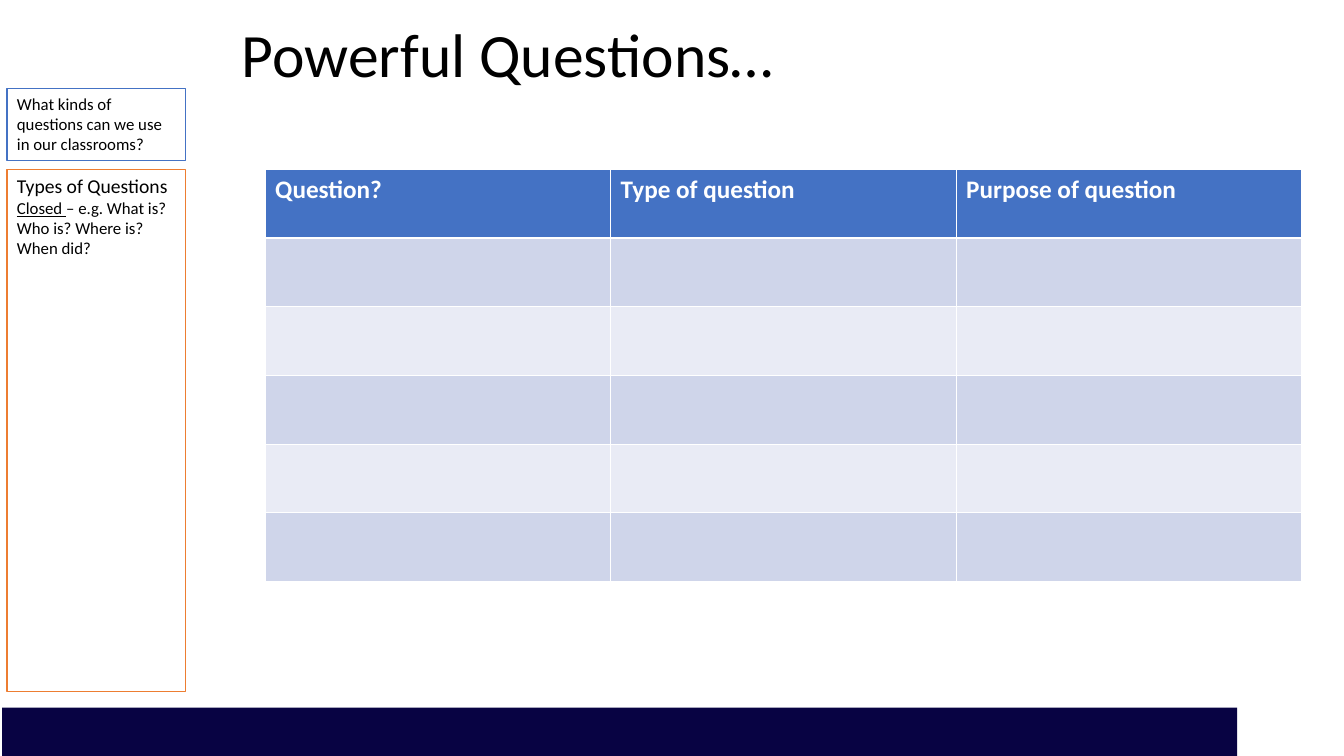
from pptx import Presentation
from pptx.dml.color import RGBColor as RGB
from pptx.enum.shapes import MSO_SHAPE as SHAPE
from pptx.enum.text import MSO_ANCHOR as ANCHOR, PP_ALIGN as ALIGN
from pptx.util import Inches, Pt

BLACK = RGB(0x00, 0x00, 0x00)
WHITE = RGB(0xFF, 0xFF, 0xFF)
NAVY = RGB(0x08, 0x03, 0x43)
BLUE = RGB(0x44, 0x72, 0xC4)
ORANGE = RGB(0xED, 0x7D, 0x31)
BAND = RGB(0xCF, 0xD5, 0xEA)
PALE = RGB(0xE9, 0xEB, 0xF5)


def write(para, text, size=12, color=BLACK, bold=False, under=False):
    """Add a formatted run to a paragraph."""
    run = para.add_run()
    run.text = text
    font = run.font
    font.name, font.size, font.bold, font.underline = "Calibri", Pt(size), bold, under
    font.color.rgb = color


def block(slide, box, fill, line=None):
    """Draw a rectangle and return its text frame."""
    shape = slide.shapes.add_shape(SHAPE.RECTANGLE, *map(Inches, box))
    shape.shadow.inherit = False
    shape.fill.solid()
    shape.fill.fore_color.rgb = fill
    if line is None:
        shape.line.fill.background()
    else:
        shape.line.color.rgb = line
        shape.line.width = Pt(1)
    return shape.text_frame


def panel(slide, box, line, paras):
    """Draw an outlined box of paragraphs, each a list of runs."""
    frame = block(slide, box, WHITE, line)
    frame.word_wrap = True
    frame.vertical_anchor = ANCHOR.TOP
    for i, runs in enumerate(paras):
        para = frame.add_paragraph() if i else frame.paragraphs[0]
        para.alignment = ALIGN.LEFT
        for text, style in runs:
            write(para, text, **style)


def side(slide, left, top, width):
    """Stack the prompt and the list of question types."""
    panel(slide, (left, top, width, 0.71), BLUE,
          [[("What kinds of questions can we use in our classrooms?", {})]])
    panel(slide, (left, top + 0.8, width, 5.18), ORANGE, [
        [("Types of Questions", {"size": 14})],
        [("Closed ", {"under": True}),
         ("– e.g. What is? Who is? Where is? When did?", {})],
    ])


def title(slide, box):
    """Place the slide heading."""
    frame = slide.shapes.add_textbox(*map(Inches, box)).text_frame
    frame.word_wrap = False
    write(frame.paragraphs[0], "Powerful Questions…", size=44)


def grid(slide, box, heads, rows):
    """Draw the banded table with a header and empty rows to fill in."""
    table = slide.shapes.add_table(rows, len(heads), *map(Inches, box)).table
    for r in range(rows):
        for c, head in enumerate(heads):
            cell = table.cell(r, c)
            cell.fill.solid()
            cell.fill.fore_color.rgb = (BAND if r % 2 else PALE) if r else BLUE
            if r == 0:
                write(cell.text_frame.paragraphs[0], head,
                      size=18, color=WHITE, bold=True)


def main():
    """Build and save the slide."""
    deck = Presentation()
    deck.slide_width, deck.slide_height = Inches(13.33), Inches(7.5)
    slide = deck.slides.add_slide(deck.slide_layouts[6])
    block(slide, (0.02, 7.02, 12.25, 0.48), NAVY)
    side(slide, 0.07, 0.88, 1.77)
    title(slide, (2.3, 0.11, 5.53, 0.84))
    grid(slide, (2.63, 1.68, 10.28, 4.09),
         ["Question?", "Type of question", "Purpose of question"], 6)
    deck.save("out.pptx")


if __name__ == "__main__":
    main()
